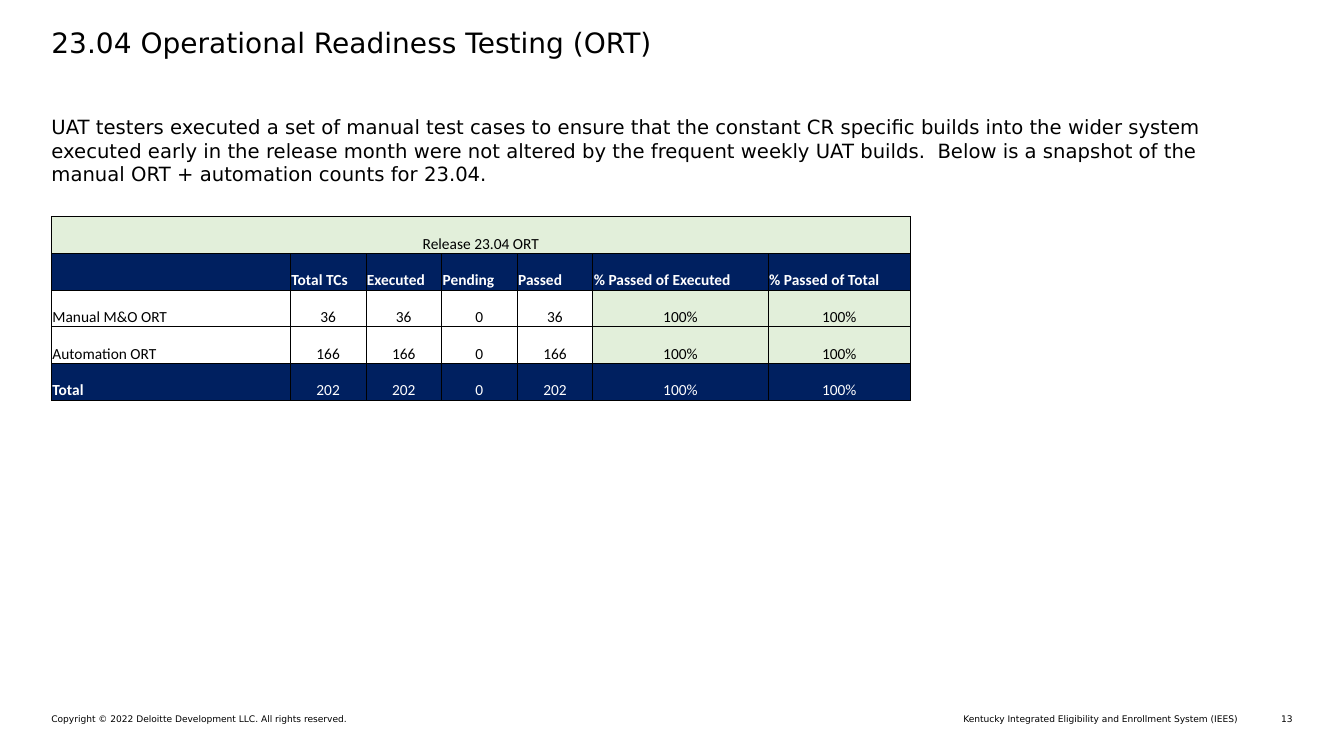
from lxml import etree
from pptx import Presentation
from pptx.dml.color import RGBColor
from pptx.enum.text import MSO_ANCHOR, PP_ALIGN
from pptx.oxml.ns import qn
from pptx.util import Inches, Pt

LEFT, CENTER, RIGHT = PP_ALIGN.LEFT, PP_ALIGN.CENTER, PP_ALIGN.RIGHT
TOP, MIDDLE, BOTTOM = MSO_ANCHOR.TOP, MSO_ANCHOR.MIDDLE, MSO_ANCHOR.BOTTOM

COLORS = {"black": "000000", "white": "FFFFFF", "navy": "002060", "green": "E2EFDA"}
BODY_FONT, TABLE_FONT = "DejaVu Sans", "Calibri"
SLIDE_W, SLIDE_H = 13.33, 7.5
MARGIN = 0.51
CONTENT_W = SLIDE_W - 2 * MARGIN

TITLE = "23.04 Operational Readiness Testing (ORT)"
SUMMARY = (
    "UAT testers executed a set of manual test cases to ensure that the constant CR "
    "specific builds into the wider system executed early in the release month were "
    "not altered by the frequent weekly UAT builds.  Below is a snapshot of the "
    "manual ORT + automation counts for 23.04."
)
COPYRIGHT = "Copyright © 2022 Deloitte Development LLC. All rights reserved."
SYSTEM = "Kentucky Integrated Eligibility and Enrollment System (IEES)"
PAGE = "13"

COL_WIDTHS = [2.37, 0.75, 0.75, 0.75, 0.75, 1.74, 1.41]
ROWS = [
    ["Release 23.04 ORT"] + [""] * 6,
    ["", "Total TCs", "Executed", "Pending", "Passed", "% Passed of Executed", "% Passed of Total"],
    ["Manual M&O ORT", "36", "36", "0", "36", "100%", "100%"],
    ["Automation ORT", "166", "166", "0", "166", "100%", "100%"],
    ["Total", "202", "202", "0", "202", "100%", "100%"],
]
HEADER_ROW, TOTAL_ROW = 1, len(ROWS) - 1
FIRST_PERCENT_COL = 5


def write(tf, text, size, font, color="black", bold=False, align=LEFT):
    """Put one formatted paragraph into a text frame."""
    p = tf.paragraphs[0]
    p.alignment = align
    r = p.add_run()
    r.text = text
    for name, value in {"size": Pt(size), "name": font, "bold": bold}.items():
        setattr(r.font, name, value)
    r.font.color.rgb = RGBColor.from_string(COLORS[color])


def add_text(s, box, text, size, align=LEFT, anchor=TOP):
    """Add a wrapped text box without insets."""
    tf = s.shapes.add_textbox(*map(Inches, box)).text_frame
    frame = {"word_wrap": True, "vertical_anchor": anchor, "margin_left": 0,
             "margin_right": 0, "margin_top": 0, "margin_bottom": 0}
    for name, value in frame.items():
        setattr(tf, name, value)
    write(tf, text, size, BODY_FONT, align=align)


def add_borders(cell, color="black", width=0.5):
    """Draw a thin line on all four sides of a cell."""
    tc_pr = cell._tc.get_or_add_tcPr()
    for side in ("lnL", "lnR", "lnT", "lnB"):
        ln = etree.SubElement(tc_pr, qn(f"a:{side}"), w=str(Pt(width)))
        fill = etree.SubElement(ln, qn("a:solidFill"))
        etree.SubElement(fill, qn("a:srgbClr"), val=COLORS[color])


def cell_look(row, col):
    """Return fill, text colour, boldness and alignment for a cell."""
    if row == 0:
        return "green", "black", False, CENTER
    align = LEFT if row == HEADER_ROW or col == 0 else CENTER
    if row in (HEADER_ROW, TOTAL_ROW):
        return "navy", "white", align == LEFT, align
    return ("green" if col >= FIRST_PERCENT_COL else None), "black", False, align


def add_results(s, left, top, height):
    """Add the test results table with its merged caption row."""
    table = s.shapes.add_table(
        len(ROWS), len(COL_WIDTHS), Inches(left), Inches(top),
        Inches(sum(COL_WIDTHS)), Inches(height)).table
    for column, width in zip(table.columns, COL_WIDTHS):
        column.width = Inches(width)
    inset = Inches(0.01)
    layout = {"vertical_anchor": BOTTOM, "margin_left": inset, "margin_right": inset,
              "margin_top": inset, "margin_bottom": 0}
    for i, row in enumerate(ROWS):
        for j, text in enumerate(row):
            cell = table.cell(i, j)
            fill, color, bold, align = cell_look(i, j)
            for name, value in layout.items():
                setattr(cell, name, value)
            add_borders(cell)
            if fill:
                cell.fill.solid()
                cell.fill.fore_color.rgb = RGBColor.from_string(COLORS[fill])
            else:
                cell.fill.background()
            if text:
                write(cell.text_frame, text, 11, TABLE_FONT, color, bold, align)
    table.cell(0, 0).merge(table.cell(0, len(COL_WIDTHS) - 1))


def add_footer(s, left, top, width, height):
    """Add the copyright line, system name and page number."""
    right = left + width
    add_text(s, (left, top, 5.86, height), COPYRIGHT, 6.5)
    add_text(s, (right - 5.89, top, 5.35, height), SYSTEM, 6.5, RIGHT)
    add_text(s, (right - 0.34, top, 0.34, height), PAGE, 6.5, RIGHT)


def main():
    """Build the slide and save it."""
    prs = Presentation()
    prs.slide_width, prs.slide_height = Inches(SLIDE_W), Inches(SLIDE_H)
    s = prs.slides.add_slide(prs.slide_layouts[6])
    add_text(s, (MARGIN, 0.23, CONTENT_W, 0.37), TITLE, 20, anchor=MIDDLE)
    add_text(s, (MARGIN, 1.14, CONTENT_W - 0.3, 0.71), SUMMARY, 14)
    add_results(s, MARGIN, 2.15, 1.82)
    add_footer(s, MARGIN, 7.08, CONTENT_W, 0.11)
    prs.save("out.pptx")


if __name__ == "__main__":
    main()
